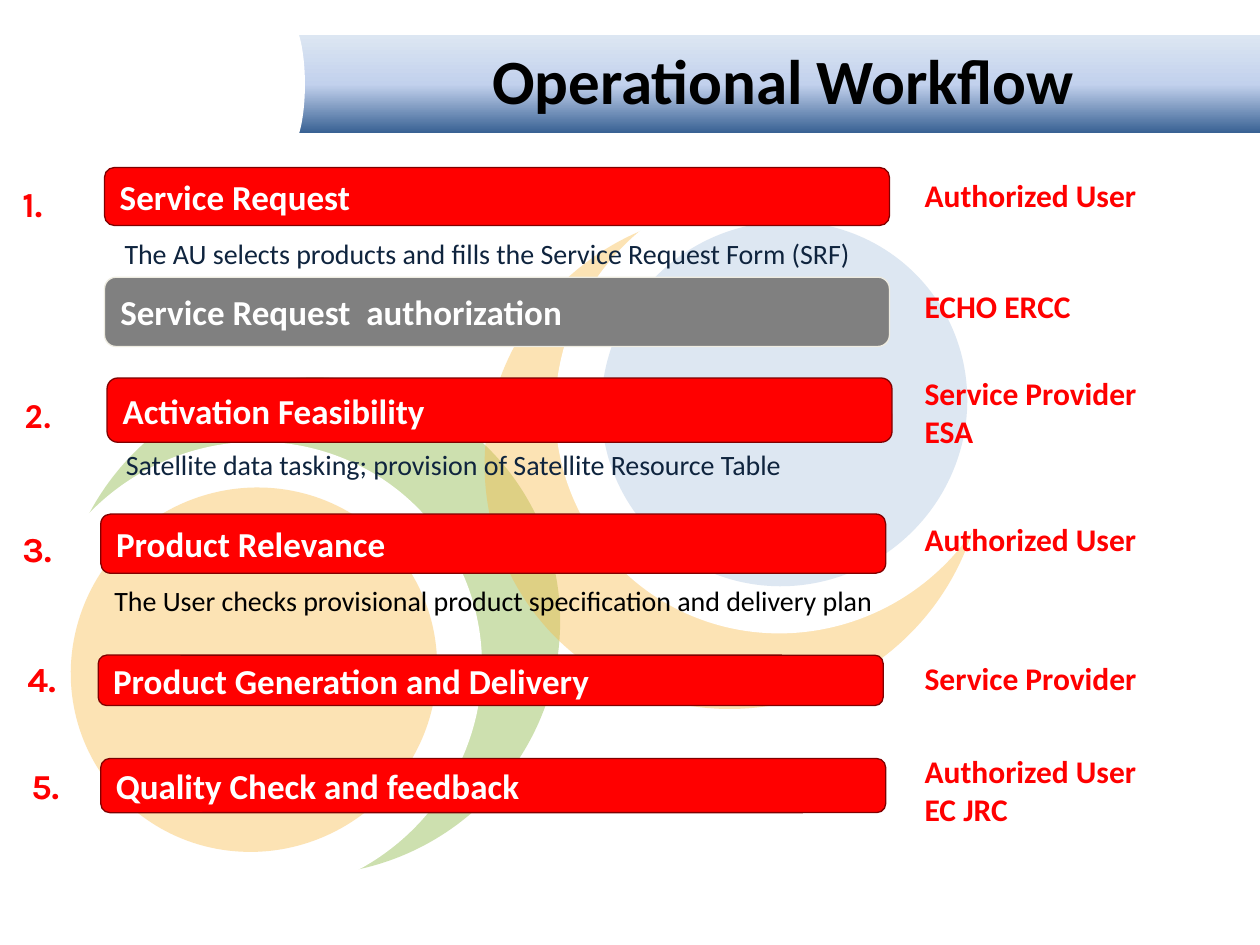
import pptx
import pptx.util
import pptx.dml.color
import pptx.enum.shapes
import pptx.enum.text
import pptx.oxml
import pptx.oxml.ns

RGB = pptx.dml.color.RGBColor
SHAPE = pptx.enum.shapes.MSO_SHAPE
ANCHOR = pptx.enum.text.MSO_ANCHOR
RED = RGB(0xFF, 0x00, 0x00)
MAROON = RGB(0x80, 0x00, 0x00)
GREY = RGB(0x80, 0x80, 0x80)
CREAM = RGB(0xEE, 0xEC, 0xE1)
NAVY = RGB(0x0F, 0x24, 0x3E)
BLACK = RGB(0x00, 0x00, 0x00)
WHITE = RGB(0xFF, 0xFF, 0xFF)
GREEN = RGB(0x84, 0xB2, 0x38)
ORANGE = RGB(0xF9, 0xB9, 0x45)
BLUE = RGB(0xAB, 0xC3, 0xDF)
BAND = [(0, RGB(0x37, 0x60, 0x92)), (50, RGB(0xC2, 0xD1, 0xED)), (100, RGB(0xDC, 0xE6, 0xF2))]

prs = pptx.Presentation()
prs.slide_width = pptx.util.Inches(10)
prs.slide_height = pptx.util.Inches(7.5)
col = prs.slide_width / 100
row = prs.slide_height / 75
s = prs.slides.add_slide(prs.slide_layouts[5])


def add_shape(kind, x, y, w, h, fill):
    sp = s.shapes.add_shape(kind, int(x * col), int(y * row), int(w * col), int(h * row))
    sp.shadow.inherit = False
    sp.fill.solid()
    sp.fill.fore_color.rgb = fill
    sp.line.fill.background()
    return sp


def set_text(sp, text, size, color, bold=True, font="Calibri", wrap=True):
    tf = sp.text_frame
    tf.text = text
    tf.word_wrap = wrap
    for p in tf.paragraphs:
        p.alignment = pptx.enum.text.PP_ALIGN.LEFT
        for r in p.runs:
            r.font.size = pptx.util.Pt(size)
            r.font.bold = bold
            r.font.name = font
            r.font.color.rgb = color


band = add_shape(SHAPE.RECTANGLE, 22.9, 2.8, 77.1, 7.8, BLUE)
stops = "".join(f'<a:gs pos="{pos * 1000}"><a:srgbClr val="{c}"/></a:gs>' for pos, c in BAND)
grad = pptx.oxml.parse_xml(
    f'<a:gradFill {pptx.oxml.ns.nsdecls("a")}><a:gsLst>{stops}</a:gsLst>'
    '<a:lin ang="16200000" scaled="0"/></a:gradFill>')
solid = band._element.spPr.find(pptx.oxml.ns.qn("a:solidFill"))
band._element.spPr.replace(solid, grad)
add_shape(SHAPE.OVAL, 21.7, 1.7, 2.5, 10, WHITE)

ovals = [
    (4.6, 30.1, 40, 39.2, 142.6, GREEN, 40),
    (38.3, 16.9, 40, 39.2, 319.6, ORANGE, 40),
    (43.9, 14.2, 36.7, 35.9, 319.6, WHITE, 100),
    (47.6, 17.7, 29.3, 28.7, 319.6, BLUE, 40),
    (1.7, 35.2, 36.7, 35.9, 142.6, WHITE, 100),
    (5.5, 38.8, 29.3, 28.7, 142.6, ORANGE, 40),
]
for x, y, w, h, angle, color, opacity in ovals:
    sp = add_shape(SHAPE.OVAL, x, y, w, h, color)
    sp.rotation = angle
    if opacity < 100:
        clr = sp._element.spPr.find(".//" + pptx.oxml.ns.qn("a:srgbClr"))
        clr.append(pptx.oxml.parse_xml(
            f'<a:alpha {pptx.oxml.ns.nsdecls("a")} val="{opacity * 1000}"/>'))

steps = [
    ("Service Request", 8.3, 13.3, 4.6, RED, MAROON),
    ("Service Request  authorization", 8.3, 22, 5.5, GREY, CREAM),
    ("Activation Feasibility", 8.5, 30, 5.1, RED, MAROON),
    ("Product Relevance", 8, 40.8, 4.7, RED, MAROON),
    ("Product Generation and Delivery", 7.8, 52, 4, RED, MAROON),
    ("Quality Check and feedback", 8, 60.2, 4.3, RED, MAROON),
]
for text, x, y, h, fill, line in steps:
    sp = add_shape(SHAPE.ROUNDED_RECTANGLE, x, y, 62.3, h, fill)
    sp.adjustments[0] = 0.167
    sp.line.color.rgb = line
    sp.line.width = pptx.util.Pt(0.75)
    sp.text_frame.vertical_anchor = ANCHOR.MIDDLE
    set_text(sp, text, 20, WHITE)

numbers = [("1.", 0.8, 14, "Karla"), ("2.", 1, 30.7, "Calibri"), ("3.", 0.8, 41.4, "Karla"),
           ("4.", 1.2, 51.7, "Karla"), ("5.", 1.5, 60.2, "Karla")]
for text, x, y, font in numbers:
    sp = s.shapes.add_textbox(int(x * col), int(y * row), int(4.7 * col), int(4.3 * row))
    set_text(sp, text, 20, RED, font=font)

details = [
    ("The AU selects products and fills the Service Request Form (SRF)", 8.9, 18.3, 60.4, NAVY),
    ("Satellite data tasking; provision of Satellite Resource Table", 9, 35, 54.7, NAVY),
    ("The User checks provisional product specification and delivery plan", 8.1, 45.8, 62.6, BLACK),
]
for text, x, y, w, color in details:
    sp = s.shapes.add_textbox(int(x * col), int(y * row), int(w * col), int(3.7 * row))
    set_text(sp, text, 16, color, bold=False, wrap=False)

actors = [("Authorized User", 13.5, 4), ("ECHO ERCC", 22.3, 4), ("Service Provider\nESA", 29.2, 7.1),
          ("Authorized User", 40.8, 4), ("Service Provider", 51.8, 4), ("Authorized User\nEC JRC", 59.2, 7.1)]
for text, y, h in actors:
    sp = s.shapes.add_textbox(int(72.4 * col), int(y * row), int(26 * col), int(h * row))
    set_text(sp, text, 18, RED)

title = s.shapes.title
title.left, title.top = int(22.5 * col), int(3.3 * row)
title.width, title.height = int(79.3 * col), int(6 * row)
set_text(title, "Operational Workflow", 36, BLACK)
title.text_frame.vertical_anchor = ANCHOR.MIDDLE
title.text_frame.paragraphs[0].alignment = pptx.enum.text.PP_ALIGN.CENTER
s.shapes._spTree.append(title._element)

prs.save("out.pptx")
